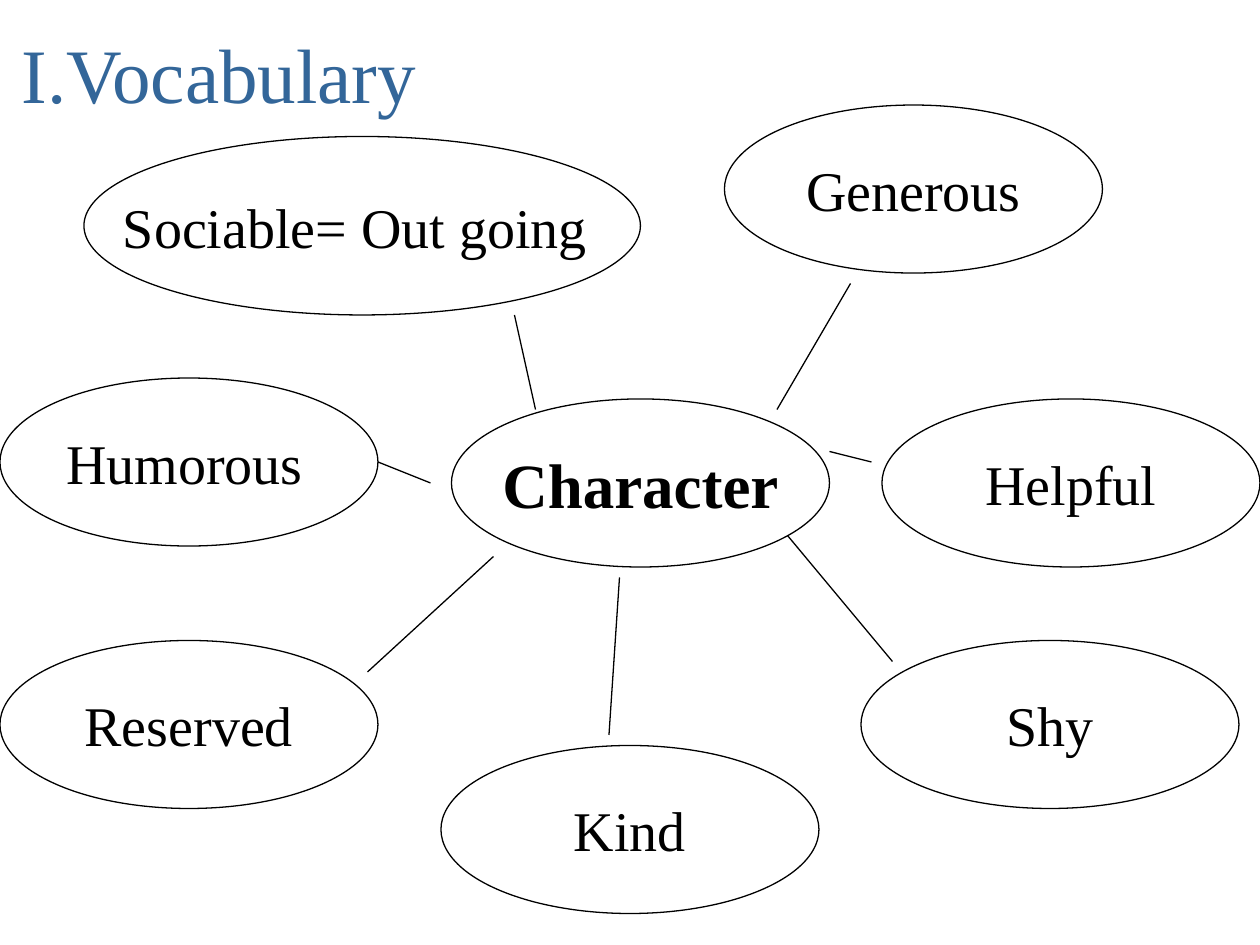
from pptx import Presentation
from pptx.dml.color import RGBColor
from pptx.enum.shapes import MSO_CONNECTOR as Connector, MSO_SHAPE as Shape
from pptx.enum.text import MSO_ANCHOR as Anchor, PP_ALIGN as Align
from pptx.util import Pt
from lxml.etree import SubElement
from pptx.oxml.ns import qn


def color(value):
    return RGBColor.from_string(value)


def write(para, text, size=32, font="Times New Roman", fill="000000", bold=False):
    para.alignment = Align.CENTER
    span = para.add_run()
    span.text = text
    span.font.size = Pt(size)
    span.font.name = font
    span.font.bold = bold
    span.font.color.rgb = color(fill)


deck = Presentation()
deck.slide_width, deck.slide_height = Pt(720), Pt(540)
page = deck.slides.add_slide(deck.slide_layouts[6])

word = {}
center = {"size": 36, "bold": True}
bubbles = [
    ("Character", 258, 228, 216, 96, center),
    ("Helpful", 504, 228, 216, 96, word),
    ("Shy", 492, 366, 216, 96, word),
    ("Kind", 252, 426, 216, 96, word),
    ("Reserved", 0, 366, 216, 96, word),
    ("Humorous", 0, 216, 216, 96, word),
    ("Generous", 414, 60, 216, 96, word),
    ("Sociable= Out going ", 48, 78, 318, 102, word),
]
for text, left, top, width, height, style in bubbles:
    bubble = page.shapes.add_shape(
        Shape.OVAL, Pt(left), Pt(top), Pt(width), Pt(height))
    bubble.shadow.inherit = False
    bubble.fill.solid()
    bubble.fill.fore_color.rgb = color("FFFFFF")
    bubble.line.color.rgb = color("000000")
    bubble.line.width = Pt(0.75)
    frame = bubble.text_frame
    frame.word_wrap = False
    frame.vertical_anchor = Anchor.MIDDLE
    write(frame.paragraphs[0], text, **style)
    if text == "Humorous":
        write(frame.paragraphs[0], " ", size=18, font="Arial")

spokes = [
    (294, 180, 306, 234),
    (246, 276, 216, 264),
    (486, 162, 444, 234),
    (498, 264, 474, 258),
    (450, 306, 510, 378),
    (354, 330, 348, 420),
    (282, 318, 210, 384),
]
for ends in spokes:
    spoke = page.shapes.add_connector(Connector.STRAIGHT, *map(Pt, ends))
    spoke.line.color.rgb = color("000000")
    spoke.line.width = Pt(0.75)
    SubElement(spoke._element.spPr, qn("a:effectLst"))

title = page.shapes.add_textbox(Pt(5), Pt(6), Pt(240.5), Pt(50.5))
frame = title.text_frame
frame.word_wrap = False
frame.margin_top, frame.margin_bottom = Pt(9), Pt(0)
write(frame.paragraphs[0], "I.Vocabulary ", size=44, fill="336699")

deck.save("out.pptx")
